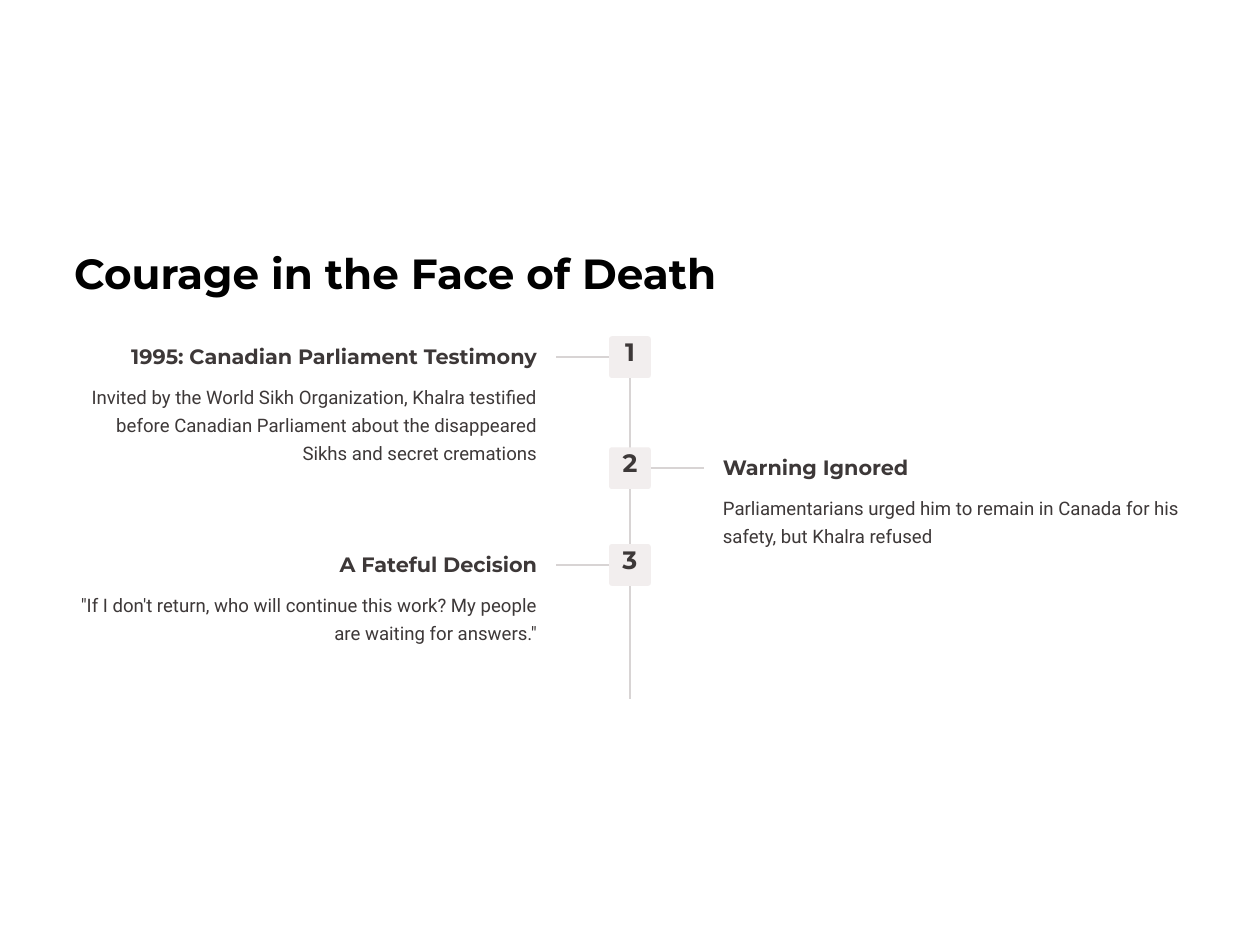
from lxml import etree
from pptx import Presentation
from pptx.dml.color import RGBColor
from pptx.enum.shapes import MSO_CONNECTOR, MSO_SHAPE
from pptx.enum.text import MSO_ANCHOR, MSO_AUTO_SIZE, PP_ALIGN
from pptx.oxml.ns import qn
from pptx.util import Inches, Pt

STRAIGHT = MSO_CONNECTOR.STRAIGHT
ROUNDED = MSO_SHAPE.ROUNDED_RECTANGLE
LEFT, CENTER, RIGHT = PP_ALIGN.LEFT, PP_ALIGN.CENTER, PP_ALIGN.RIGHT
TOP = MSO_ANCHOR.TOP
NO_FIT = MSO_AUTO_SIZE.NONE
LEFT_SITE, RIGHT_SITE = 1, 3

COLORS = {
    "background": "FFFFFF",
    "title": "000000",
    "text": "3D3838",
    "line": "D8D4D4",
    "marker": "F2EEEE",
}
HEADING_FONT, BODY_FONT = "Montserrat", "Roboto"

AXIS_X, AXIS_TOP, AXIS_BOTTOM = 8, 4.27, 8.88
MARKER = 0.53
BRANCH = 0.94
TEXT_GAP = 1.18
TEXT_WIDTH = 5.87

EVENTS = [
    (4.27, RIGHT, "1995: Canadian Parliament Testimony",
     "Invited by the World Sikh Organization, Khalra testified before Canadian "
     "Parliament about the disappeared Sikhs and secret cremations"),
    (5.68, LEFT, "Warning Ignored",
     "Parliamentarians urged him to remain in Canada for his safety, "
     "but Khalra refused"),
    (6.91, RIGHT, "A Fateful Decision",
     "\"If I don't return, who will continue this work? "
     "My people are waiting for answers.\""),
]


def rgb(name):
    return RGBColor.from_string(COLORS[name])


def write(shape, text, font, size, spacing, align, color="text", bold=True, inset=0):
    tf = shape.text_frame
    tf.word_wrap = True
    tf.auto_size = NO_FIT
    tf.vertical_anchor = TOP
    tf.margin_left = tf.margin_right = tf.margin_bottom = 0
    tf.margin_top = Inches(inset)
    p = tf.paragraphs[0]
    p.text = text
    p.alignment = align
    p.line_spacing = Pt(spacing)
    p.font.name = font
    p.font.size = Pt(size)
    p.font.bold = bold
    p.font.color.rgb = rgb(color)


def add_title(s, text):
    title = s.shapes.title
    title.left, title.top = Inches(0.94), Inches(3.12)
    title.width, title.height = Inches(14.12), Inches(0.67)
    write(title, text, HEADING_FONT, 38.5, 48, LEFT, color="title")


def add_text(s, left, top, height, text, *style, **options):
    box = s.shapes.add_textbox(Inches(left), Inches(top),
                               Inches(TEXT_WIDTH), Inches(height))
    write(box, text, *style, **options)


def add_line(s, x1, y1, x2, y2):
    line = s.shapes.add_connector(STRAIGHT, Inches(x1), Inches(y1),
                                  Inches(x2), Inches(y2))
    line.line.color.rgb = rgb("line")
    line.line.width = Inches(0.03)
    etree.SubElement(line._element.spPr, qn("a:effectLst"))
    return line


def add_marker(s, top, number):
    marker = s.shapes.add_shape(ROUNDED, Inches(AXIS_X - MARKER / 2), Inches(top),
                                Inches(MARKER), Inches(MARKER))
    marker.adjustments[0] = 0.067
    marker.shadow.inherit = False
    marker.fill.solid()
    marker.fill.fore_color.rgb = rgb("marker")
    marker.line.fill.background()
    write(marker, str(number), HEADING_FONT, 23, 23, CENTER, inset=0.06)
    return marker


def add_event(s, number, top, align, heading, body):
    on_left = align == RIGHT
    side = -1 if on_left else 1
    text_left = AXIS_X - TEXT_GAP - TEXT_WIDTH if on_left else AXIS_X + TEXT_GAP
    middle = top + MARKER / 2
    marker = add_marker(s, top, number)
    branch = add_line(s, AXIS_X + side * MARKER / 2, middle,
                      AXIS_X + side * BRANCH, middle)
    branch.begin_connect(marker, LEFT_SITE if on_left else RIGHT_SITE)
    add_text(s, text_left, top + 0.08, 0.34, heading, HEADING_FONT, 19, 24, align)
    add_text(s, text_left, top + 0.56, 1.06, body, BODY_FONT, 17, 25.5, align,
             bold=False)


def main():
    prs = Presentation()
    prs.slide_width, prs.slide_height = Inches(16), Inches(12)
    s = prs.slides.add_slide(prs.slide_layouts[5])
    s.background.fill.solid()
    s.background.fill.fore_color.rgb = rgb("background")
    add_title(s, "Courage in the Face of Death")
    add_line(s, AXIS_X, AXIS_TOP, AXIS_X, AXIS_BOTTOM)
    for number, event in enumerate(EVENTS, 1):
        add_event(s, number, *event)
    prs.save("out.pptx")


if __name__ == "__main__":
    main()
